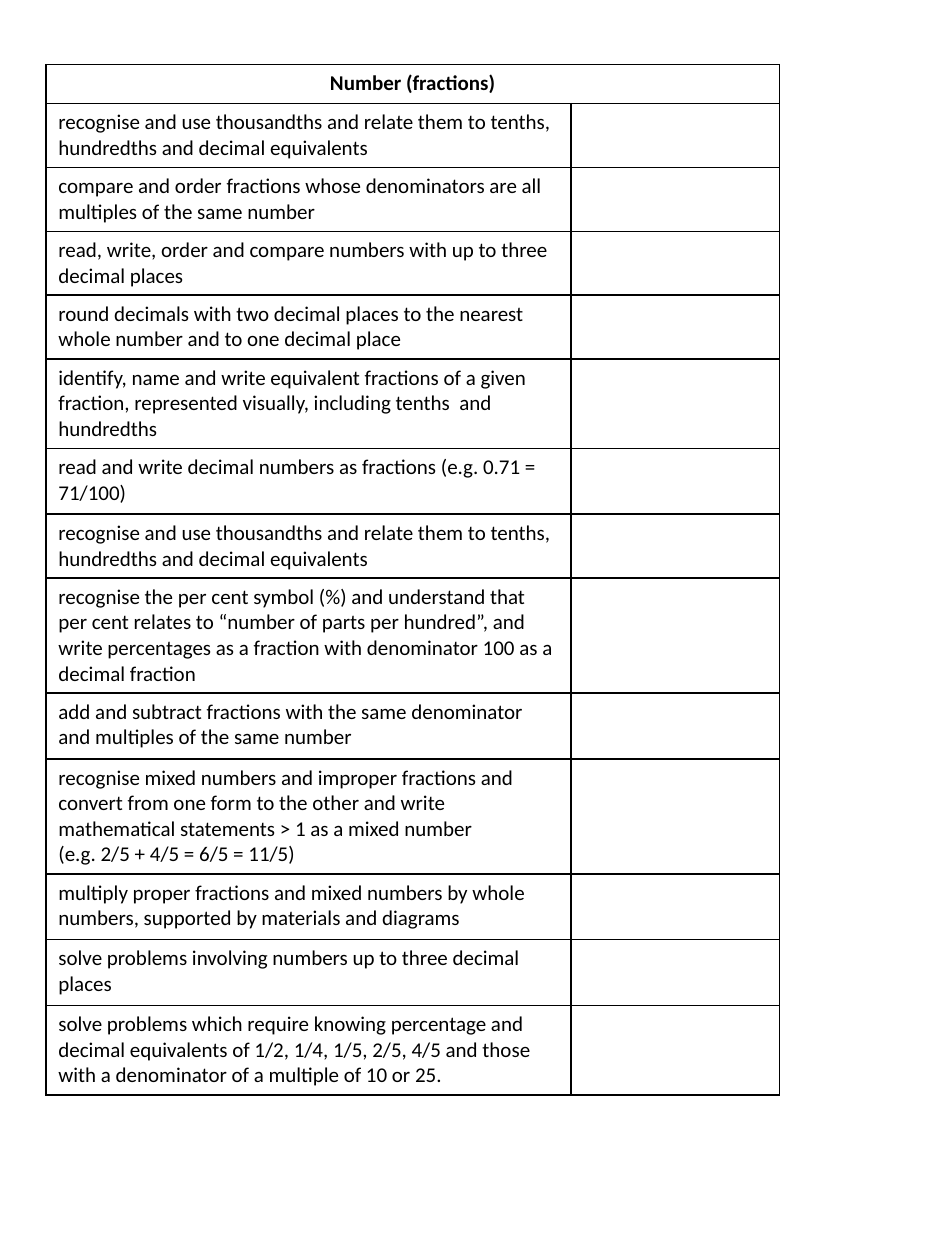
"""Build a one-page checklist table of number (fractions) goals."""
from lxml import etree
from pptx import Presentation
from pptx.dml.color import RGBColor
from pptx.enum.text import PP_ALIGN
from pptx.oxml.ns import qn
from pptx.util import Pt

BLACK = RGBColor(0, 0, 0)
CENTER = PP_ALIGN.CENTER
LEFT = PP_ALIGN.LEFT
FONT = "Calibri"
TITLE = "Number (fractions)"
TITLE_HEIGHT = 22.3
WIDTHS = (300.2, 119)
GOALS = (
    (36.4, "recognise and use thousandths and relate them to tenths,\n"
           "hundredths and decimal equivalents"),
    (36.4, "compare and order fractions whose denominators are all\n"
           "multiples of the same number"),
    (36.4, "read, write, order and compare numbers with up to three decimal places"),
    (36.4, "round decimals with two decimal places to the nearest whole number "
           "and to one decimal place"),
    (51, "identify, name and write equivalent fractions of a given fraction, "
         "represented visually, including tenths  and hundredths"),
    (37.6, "read and write decimal numbers as fractions (e.g. 0.71 =\n71/100)"),
    (36.4, "recognise and use thousandths and relate them to tenths, "
           "hundredths and decimal equivalents"),
    (65.7, "recognise the per cent symbol (%) and understand that per cent "
           "relates to “number of parts per hundred”, and\n"
           "write percentages as a fraction with denominator 100 as a decimal fraction"),
    (37.6, "add and subtract fractions with the same denominator "
           "and multiples of the same number"),
    (65.7, "recognise mixed numbers and improper fractions and convert from one form "
           "to the other and write mathematical statements > 1 as a mixed number\n"
           "(e.g. 2/5 + 4/5 = 6/5 = 11/5)"),
    (37.6, "multiply proper fractions and mixed numbers by whole numbers, "
           "supported by materials and diagrams"),
    (37.6, "solve problems involving numbers up to three decimal places"),
    (51, "solve problems which require knowing percentage and decimal equivalents of "
         "1/2, 1/4, 1/5, 2/5, 4/5 and those with a denominator of a multiple of 10 or 25."),
)


def add_border(cell):
    """Draw a thin black line on each side of a cell."""
    props = cell._tc.get_or_add_tcPr()
    for side in ("lnL", "lnR", "lnT", "lnB"):
        line = etree.SubElement(props, qn(f"a:{side}"), w=str(Pt(1)))
        fill = etree.SubElement(line, qn("a:solidFill"))
        etree.SubElement(fill, qn("a:srgbClr"), val=str(BLACK))


def fill_cell(cell, text="", bold=False, align=LEFT):
    """Write text in a plain bordered cell."""
    add_border(cell)
    cell.fill.background()
    cell.text = text
    for para in cell.text_frame.paragraphs:
        para.alignment = align
        font = para.font
        font.name, font.size, font.bold = FONT, Pt(12), bold
        font.color.rgb = BLACK


def add_grid(slide):
    """Add the empty table with its row and column sizes."""
    heights = [TITLE_HEIGHT] + [height for height, _ in GOALS]
    frame = slide.shapes.add_table(
        len(heights), len(WIDTHS), Pt(26.2), Pt(36.9), Pt(sum(WIDTHS)), Pt(sum(heights)))
    table = frame.table
    table.first_row = table.horz_banding = False
    for column, width in zip(table.columns, WIDTHS):
        column.width = Pt(width)
    for row, height in zip(table.rows, heights):
        row.height = Pt(height)
    return table


def main():
    """Make the slide and save it."""
    deck = Presentation()
    deck.slide_width, deck.slide_height = Pt(540), Pt(720)
    slide = deck.slides.add_slide(deck.slide_layouts[6])
    table = add_grid(slide)
    table.cell(0, 0).merge(table.cell(0, 1))
    fill_cell(table.cell(0, 0), TITLE, True, CENTER)
    fill_cell(table.cell(0, 1))
    for row, (_, goal) in enumerate(GOALS, 1):
        fill_cell(table.cell(row, 0), goal)
        fill_cell(table.cell(row, 1))
    deck.save("out.pptx")


if __name__ == "__main__":
    main()
